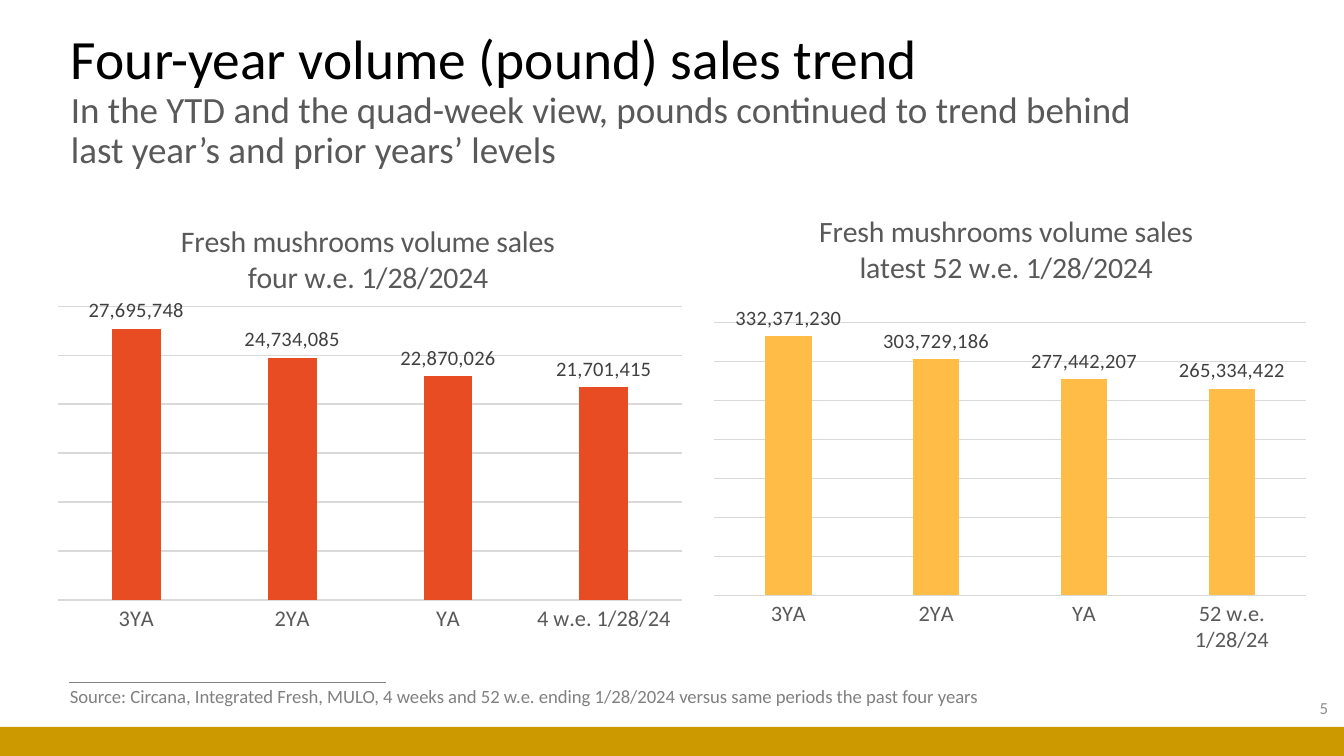
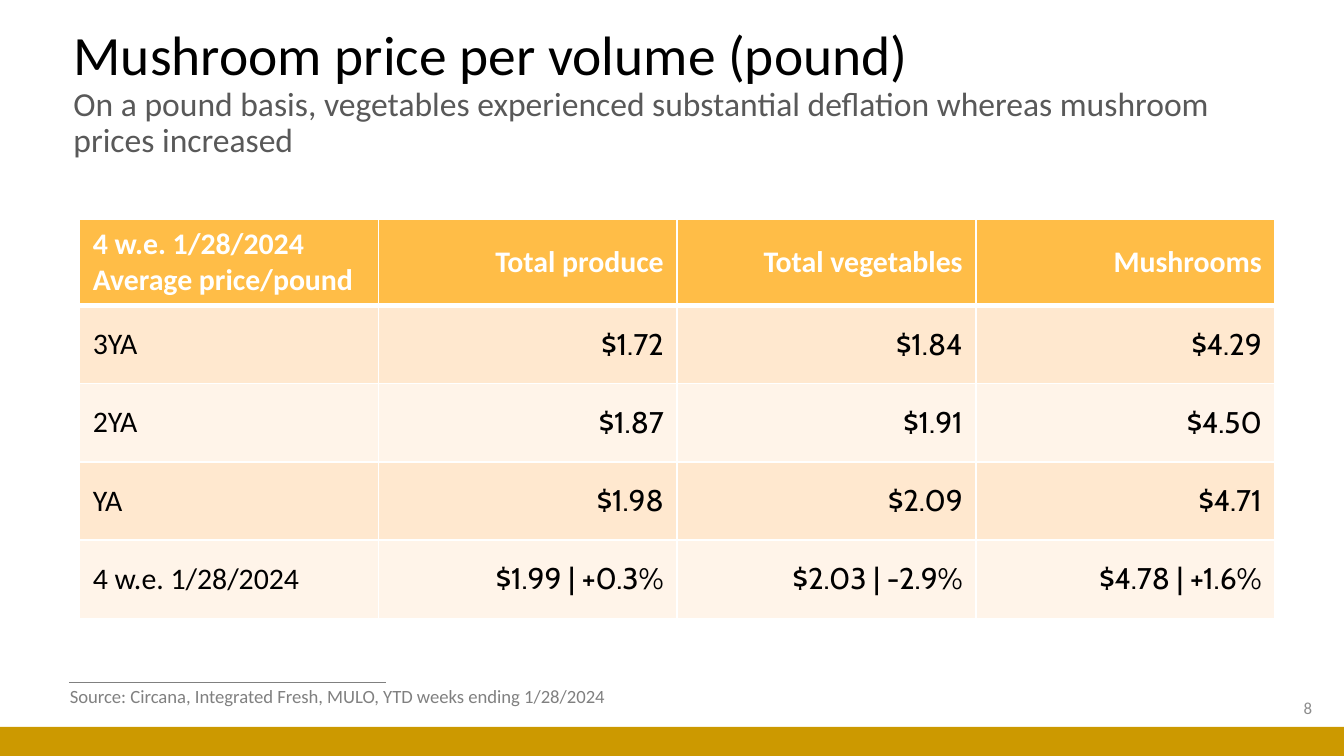
from lxml import etree
from pptx import Presentation
from pptx.chart.data import CategoryChartData
from pptx.dml.color import RGBColor
from pptx.enum.chart import XL_CHART_TYPE, XL_LABEL_POSITION, XL_TICK_MARK
from pptx.enum.shapes import MSO_CONNECTOR, MSO_SHAPE
from pptx.enum.text import MSO_ANCHOR, PP_ALIGN
from pptx.oxml.ns import qn
from pptx.util import Cm, Pt

COLUMN = XL_CHART_TYPE.COLUMN_CLUSTERED
OUTSIDE = XL_LABEL_POSITION.OUTSIDE_END
NO_TICK = XL_TICK_MARK.NONE
STRAIGHT = MSO_CONNECTOR.STRAIGHT
RECT = MSO_SHAPE.RECTANGLE
TOP, MIDDLE = MSO_ANCHOR.TOP, MSO_ANCHOR.MIDDLE
LEFT, RIGHT = PP_ALIGN.LEFT, PP_ALIGN.RIGHT

BLACK = RGBColor(0x00, 0x00, 0x00)
WHITE = RGBColor(0xFF, 0xFF, 0xFF)
SLATE = RGBColor(0x59, 0x59, 0x59)
DARK = RGBColor(0x40, 0x40, 0x40)
GREY = RGBColor(0x80, 0x80, 0x80)
PALE = RGBColor(0x8C, 0x8C, 0x8C)
GRID = RGBColor(0xD9, 0xD9, 0xD9)
GOLD = RGBColor(0xCC, 0x99, 0x00)
RED = RGBColor(0xE8, 0x4C, 0x22)
AMBER = RGBColor(0xFF, 0xBD, 0x47)
PEACH = RGBColor(0xFF, 0xE8, 0xCF)
CREAM = RGBColor(0xFF, 0xF4, 0xE9)

BODY, FIGURE = "Calibri", "Cabin"
COMMAS = "#,##0"


def style(font, size, color, name=BODY, bold=False):
    font.size, font.name, font.bold = Pt(size), name, bold
    font.color.rgb = color


def stroke(line, color, width):
    line.color.rgb = color
    line.width = Pt(width)


def place(node, index, **values):
    """Give a chart part a manual layout."""
    old = node.find(qn("c:layout"))
    if old is not None:
        node.remove(old)
    layout = etree.Element(qn("c:layout"))
    manual = etree.SubElement(layout, qn("c:manualLayout"))
    for tag, value in values.items():
        etree.SubElement(manual, qn("c:" + tag)).set("val", str(value))
    node.insert(index, layout)


def border(cell, **widths):
    """Draw white cell borders, widths in points."""
    props = cell._tc.get_or_add_tcPr()
    for index, side in enumerate("LRTB"):
        line = etree.Element(qn("a:ln" + side), w=str(Pt(widths.get(side, 1))))
        fill = etree.SubElement(line, qn("a:solidFill"))
        etree.SubElement(fill, qn("a:srgbClr"), val=str(WHITE))
        props.insert(index, line)


class Deck:
    def __init__(self):
        self.show = Presentation()
        self.show.slide_width, self.show.slide_height = Cm(25.4), Cm(14.29)
        self.slide = None

    def page(self):
        """Start a slide with the footer rule and band."""
        self.slide = self.show.slides.add_slide(self.show.slide_layouts[6])
        rule = self.slide.shapes.add_connector(
            STRAIGHT, Cm(1.3), Cm(12.9), Cm(7.29), Cm(12.9))
        stroke(rule.line, GREY, 0.5)
        etree.SubElement(rule._element.spPr, qn("a:effectLst"))
        band = self.slide.shapes.add_shape(
            RECT, 0, Cm(13.74), Cm(25.4), Cm(0.55))
        band.shadow.inherit = False
        band.fill.solid()
        band.fill.fore_color.rgb = GOLD
        band.line.fill.background()

    def text(self, words, box, looks, align=LEFT, anchor=MIDDLE, wrap=True):
        """Add a text box; looks holds size and colour of each run."""
        frame = self.slide.shapes.add_textbox(*map(Cm, box)).text_frame
        frame.text = words
        frame.word_wrap, frame.vertical_anchor = wrap, anchor
        para = frame.paragraphs[0]
        para.alignment = align
        for run, look in zip(para.runs, looks):
            style(run.font, *look)
        return para

    def title(self, head, sub, box, size):
        looks = [(29.7, BLACK), (size, SLATE)]
        self.text(f"{head}\v{sub}", box, looks).line_spacing = 0.9

    def foot(self, source, width, number, left):
        self.text(source, (1.07, 12.83, width, 0.69), [(10, GREY)],
                  anchor=TOP, wrap=False)
        self.text(number, (left, 13, 5.72, 0.76), [(9, PALE)], RIGHT)

    def chart(self, title, spot, box, plot, cats, vals, color):
        """Add a column chart; spot and plot are shares of its area."""
        data = CategoryChartData(number_format=COMMAS)
        data.categories = cats
        data.add_series("Series 1", vals)
        chart = self.slide.shapes.add_chart(
            COLUMN, *map(Cm, box), data).chart
        style(chart.font, 10, BLACK)
        chart.has_legend = False

        # Title and plot area
        chart.has_title = True
        frame = chart.chart_title.text_frame
        frame.text = title
        for para in frame.paragraphs:
            style(para.runs[0].font, 16, SLATE)
        x, y = spot
        place(chart.chart_title._element, 1,
              xMode="edge", yMode="edge", x=x, y=y)
        top, height = plot
        place(chart._chartSpace.find(".//" + qn("c:plotArea")), 0,
              layoutTarget="inner", xMode="edge", yMode="edge",
              x=0, y=top, w=1, h=height)

        # Axes
        axis = chart.category_axis
        axis.major_tick_mark = axis.minor_tick_mark = NO_TICK
        style(axis.tick_labels.font, 12, SLATE)
        stroke(axis.format.line, GRID, 0.75)
        scale = chart.value_axis
        scale.visible = False
        scale.minimum_scale = 0
        scale.has_major_gridlines = True
        stroke(scale.major_gridlines.format.line, GRID, 0.75)

        # Columns and labels
        bars = chart.plots[0]
        bars.gap_width, bars.overlap = 219, -27
        bars.vary_by_categories = False
        fill = bars.series[0].format.fill
        fill.solid()
        fill.fore_color.rgb = color
        labels = bars.series[0].data_labels
        labels.show_value = True
        labels.position = OUTSIDE
        labels.number_format, labels.number_format_is_linked = COMMAS, False
        style(labels.font, 11, DARK)

    def table(self, rows, box):
        grid = self.slide.shapes.add_table(
            len(rows), len(rows[0]), *map(Cm, box)).table
        for r, row in enumerate(rows):
            grid.rows[r].height = Cm(1.48 if r else 1.63)
            for c, words in enumerate(row):
                self.cell(grid.cell(r, c), words, r, c)

    def cell(self, cell, words, r, c):
        border(cell, B=1 if r else 3, T=3 if r == 1 else 1)
        cell.fill.solid()
        shade = (CREAM, PEACH)[r % 2] if r else AMBER
        cell.fill.fore_color.rgb = shade
        cell.vertical_anchor = MIDDLE
        cell.text_frame.text = words
        for para in cell.text_frame.paragraphs:
            para.alignment = RIGHT if c else LEFT
            style(para.runs[0].font, 16, BLACK if r else WHITE,
                  FIGURE if r and c else BODY, not r)


def main():
    deck = Deck()
    past = ["3YA", "2YA", "YA"]

    # Volume trend
    deck.page()
    deck.title("Four-year volume (pound) sales trend",
               "In the YTD and the quad-week view, pounds continued to trend "
               "behind last year’s and prior years’ levels",
               (1.09, 0.91, 21.21, 2.01), 19.8)
    deck.foot("Source: Circana, Integrated Fresh, MULO, 4 weeks and 52 w.e. "
              "ending 1/28/2024 versus same periods the past four years",
              18.03, "5", 19.63)
    deck.chart("Fresh mushrooms volume sales\nfour w.e. 1/28/2024",
               (0.19, 0.02), (1.09, 3.94, 11.81, 8.41), (0.22, 0.66),
               past + ["4 w.e. 1/28/24"],
               [27695748, 24734085, 22870026, 21701415], RED)
    deck.chart("Fresh mushrooms volume sales\nlatest 52 w.e. 1/28/2024",
               (0.17, 0), (13.49, 3.94, 11.2, 8.41), (0.26, 0.62),
               past + ["52 w.e. 1/28/24"],
               [332371230, 303729186, 277442207, 265334422], AMBER)

    # Price table
    deck.page()
    deck.title("Mushroom price per volume (pound)",
               "On a pound basis, vegetables experienced substantial "
               "deflation whereas mushroom prices increased",
               (1.14, 0.56, 22.2, 2.41), 18)
    deck.table([
        ["4 w.e. 1/28/2024\nAverage price/pound",
         "Total produce", "Total vegetables", "Mushrooms"],
        ["3YA", "$1.72", "$1.84", "$4.29"],
        ["2YA", "$1.87", "$1.91", "$4.50"],
        ["YA", "$1.98", "$2.09", "$4.71"],
        ["4 w.e. 1/28/2024",
         "$1.99 | +0.3%", "$2.03 | -2.9%", "$4.78 | +1.6%"],
    ], (1.5, 4.14, 22.6, 7.52))
    deck.foot("Source: Circana, Integrated Fresh, MULO, YTD weeks ending "
              "1/28/2024", 10.95, "8", 19.33)

    deck.show.save("out.pptx")


if __name__ == "__main__":
    main()
